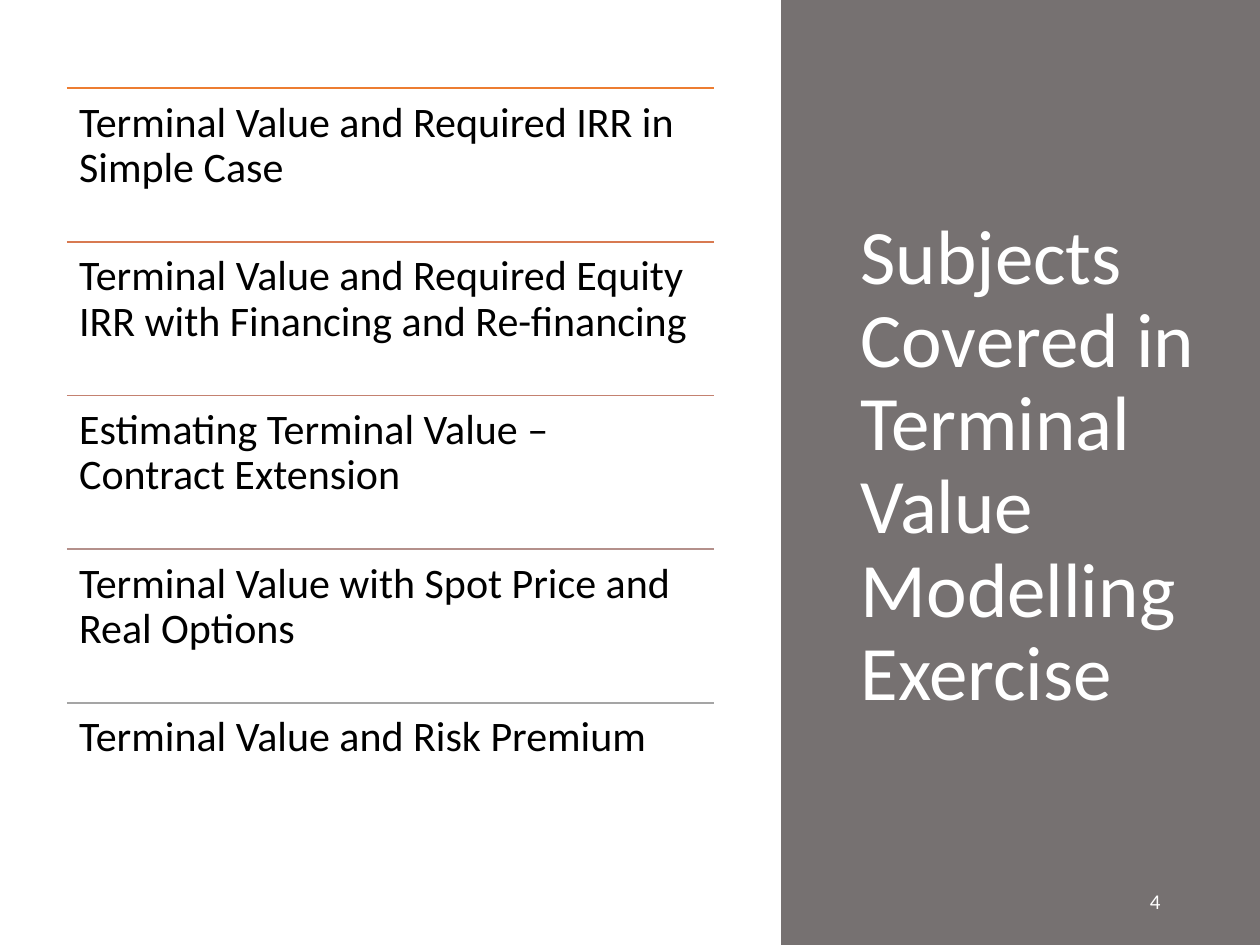
from lxml import etree
from pptx import Presentation
from pptx import util as u
from pptx.dml.color import RGBColor
from pptx.enum import shapes, text

WIDTH, HEIGHT = u.Inches(10), u.Inches(7.5)
COLOURS = {"panel": "767171", "body": "000000", "light": "FFFFFF"}
SUBJECTS = {
    "Terminal Value and Required IRR in Simple Case": "ED7D31",
    "Terminal Value and Required Equity IRR with Financing and Re-financing": "D87A51",
    "Estimating Terminal Value – Contract Extension": "C48170",
    "Terminal Value with Spot Price and Real Options": "B4908B",
    "Terminal Value and Risk Premium": "A5A5A5",
}


def share(box, left, top, width, height):
    """Return the part of box given by shares of its width and height."""
    x, y, w, h = box
    return (round(x + left * w), round(y + top * h),
            round(width * w), round(height * h))


def add_words(slide, box, words, size, colour, frame_format, paragraph_format):
    frame = slide.shapes.add_textbox(*box).text_frame
    for name, value in {"word_wrap": True, **frame_format}.items():
        setattr(frame, name, value)
    paragraph = frame.paragraphs[0]
    paragraph.text = words
    for name, value in paragraph_format.items():
        setattr(paragraph, name, value)
    font = paragraph.runs[0].font
    font.name, font.size = "Calibri", u.Pt(size)
    font.color.rgb = RGBColor.from_string(COLOURS[colour])


def add_rule(slide, x, y, width, colour):
    rule = slide.shapes.add_connector(
        shapes.MSO_CONNECTOR.STRAIGHT, x, y, x + width, y)
    rule.line.width = u.Pt(1)
    rule.line.color.rgb = RGBColor.from_string(colour)
    properties = rule.element.spPr
    etree.SubElement(properties, properties.tag.replace("spPr", "effectLst").replace(
        "presentationml", "drawingml"))


def add_subject_list(slide, box):
    """Stack the subjects in equal rows, each under its own rule."""
    margins = {f"margin_{side}": u.Inches(0.1)
               for side in ("left", "top", "right", "bottom")}
    row_share = 1 / len(SUBJECTS)
    for row, (subject, colour) in enumerate(SUBJECTS.items()):
        cell = share(box, 0, row * row_share, 1, row_share)
        add_rule(slide, *cell[:3], colour)
        add_words(slide, cell, subject, 24, "body", margins, {"line_spacing": 0.9})


def add_title_panel(slide, box):
    panel = slide.shapes.add_shape(shapes.MSO_SHAPE.RECTANGLE, *box)
    panel.shadow.inherit = False
    panel.fill.solid()
    panel.fill.fore_color.rgb = RGBColor.from_string(COLOURS["panel"])
    panel.line.fill.background()
    middle = {"vertical_anchor": text.MSO_ANCHOR.MIDDLE}
    add_words(slide, share(box, 0.14, 0.093, 0.79, 0.803),
              "Subjects Covered in Terminal Value Modelling Exercise",
              44, "light", middle, {"line_spacing": 0.9})
    add_words(slide, share(box, 0.226, 0.927, 0.592, 0.053), "4", 12, "light", middle,
              {"alignment": text.PP_ALIGN.RIGHT, "space_after": u.Pt(6)})


def main():
    deck = Presentation()
    deck.slide_width, deck.slide_height = WIDTH, HEIGHT
    slide = deck.slides.add_slide(deck.slide_layouts[6])
    page = (0, 0, WIDTH, HEIGHT)
    add_title_panel(slide, share(page, 0.62, 0, 0.38, 1))
    add_subject_list(slide, share(page, 0.053, 0.0933, 0.514, 0.8133))
    deck.save("out.pptx")


if __name__ == "__main__":
    main()
